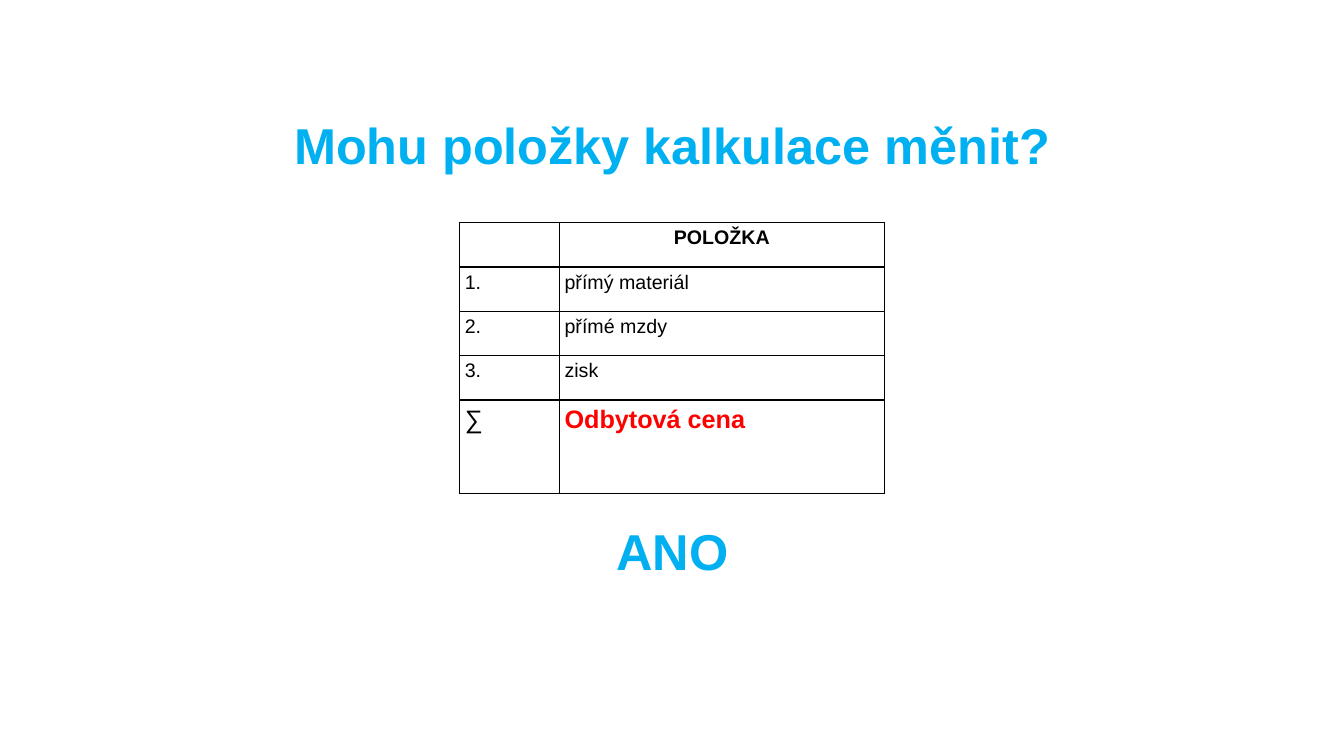
"""Build the slide asking whether costing items may be changed."""
from dataclasses import dataclass

from lxml import etree
from pptx import Presentation
from pptx import util as u
from pptx.dml.color import RGBColor
from pptx.enum import text
from pptx.oxml import ns

PX = 9144
COLORS = {"heading": "00B0F0", "body": "000000", "price": "FF0000", "border": "000000"}
COLUMN_WIDTHS = (99, 322)
ITEM_HEIGHT, TOTAL_HEIGHT = 44, 93
CENTER, LEFT = text.PP_ALIGN.CENTER, text.PP_ALIGN.LEFT


@dataclass(frozen=True)
class Style:
    size: int
    color: str = "body"
    bold: bool = False
    align: text.PP_ALIGN = LEFT
    spacing: float = 1.15


@dataclass(frozen=True)
class Heading:
    wording: str
    left: int
    top: int
    width: int
    height: int
    style: Style


@dataclass(frozen=True)
class Item:
    mark: str
    label: str
    height: int
    mark_style: Style
    label_style: Style


PLAIN = Style(14)
HEADINGS = (
    Heading("Mohu položky kalkulace měnit?", 217, 118, 900, 58,
            Style(36, "heading", True, CENTER, 0.9)),
    Heading("ANO", 560, 517, 214, 58, Style(36, "heading", True, CENTER, 1.0)),
)
ITEMS = (
    Item("", "POLOŽKA", ITEM_HEIGHT, PLAIN, Style(14, bold=True, align=CENTER)),
    *(Item(f"{number}.", label, ITEM_HEIGHT, PLAIN, PLAIN)
      for number, label in enumerate(("přímý materiál", "přímé mzdy", "zisk"), 1)),
    Item("∑", "Odbytová cena", TOTAL_HEIGHT, Style(18), Style(18, "price", True)),
)


def px(length: int) -> u.Emu:
    return u.Emu(length * PX)


def write(frame, wording: str, style: Style) -> None:
    paragraph = frame.paragraphs[0]
    paragraph.text = wording
    paragraph.alignment = style.align
    paragraph.line_spacing = style.spacing
    font = paragraph.font
    font.name, font.size, font.bold = "Arial", u.Pt(style.size), style.bold
    font.color.rgb = RGBColor.from_string(COLORS[style.color])


def draw_heading(slide, heading: Heading) -> None:
    box = slide.shapes.add_textbox(
        px(heading.left), px(heading.top), px(heading.width), px(heading.height))
    frame = box.text_frame
    frame.word_wrap = True
    frame.margin_top = frame.margin_bottom = 0
    frame.vertical_anchor = text.MSO_ANCHOR.MIDDLE
    write(frame, heading.wording, heading.style)


def add_borders(cell) -> None:
    properties = cell._tc.get_or_add_tcPr()
    for position, side in enumerate(("lnL", "lnR", "lnT", "lnB")):
        line = etree.Element(ns.qn(f"a:{side}"), w=str(u.Pt(1)))
        fill = etree.SubElement(line, ns.qn("a:solidFill"))
        etree.SubElement(fill, ns.qn("a:srgbClr"), val=COLORS["border"])
        properties.insert(position, line)


def fill_cell(cell, wording: str, style: Style) -> None:
    cell.margin_left = cell.margin_right = px(5)
    cell.margin_top, cell.margin_bottom = px(1), 0
    cell.fill.background()
    add_borders(cell)
    write(cell.text_frame, wording, style)


def draw_costing(slide, left: int, top: int) -> None:
    height = sum(item.height for item in ITEMS)
    costing = slide.shapes.add_table(
        len(ITEMS), len(COLUMN_WIDTHS), px(left), px(top),
        px(sum(COLUMN_WIDTHS)), px(height)).table
    costing.first_row = costing.horz_banding = False
    for column, width in zip(costing.columns, COLUMN_WIDTHS):
        column.width = px(width)
    for row, item in zip(costing.rows, ITEMS):
        row.height = px(item.height)
        fill_cell(row.cells[0], item.mark, item.mark_style)
        fill_cell(row.cells[1], item.label, item.label_style)


def main() -> None:
    deck = Presentation()
    deck.slide_width, deck.slide_height = px(1333), px(750)
    slide = deck.slides.add_slide(deck.slide_layouts[6])
    question, answer = HEADINGS
    draw_heading(slide, question)
    draw_costing(slide, 456, 221)
    draw_heading(slide, answer)
    deck.save("out.pptx")


if __name__ == "__main__":
    main()
